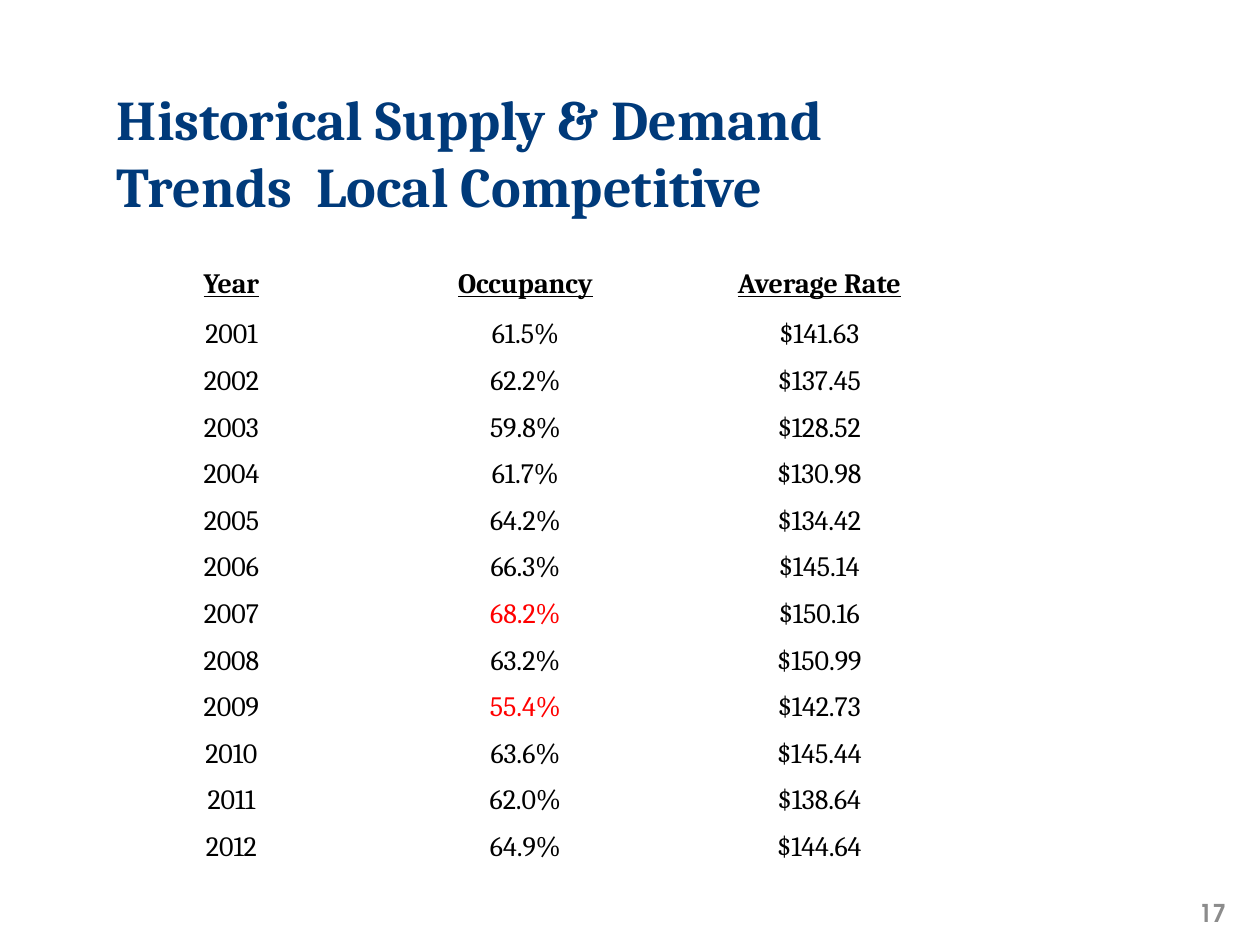
"""Build a slide with a table of yearly occupancy and average rate."""
from pptx import Presentation
from pptx.dml.color import RGBColor
from pptx.enum.text import MSO_ANCHOR, PP_ALIGN
from pptx.util import Inches, Pt

LEFT, CENTER, RIGHT = PP_ALIGN.LEFT, PP_ALIGN.CENTER, PP_ALIGN.RIGHT
MIDDLE = MSO_ANCHOR.MIDDLE

TITLE = "Historical Supply & Demand Trends  Local Competitive"
PAGE_NUMBER = "17"
HEADINGS = ("Year", "Occupancy", "Average Rate")
RECORDS = [
    ("2001", "61.5%", "$141.63"),
    ("2002", "62.2%", "$137.45"),
    ("2003", "59.8%", "$128.52"),
    ("2004", "61.7%", "$130.98"),
    ("2005", "64.2%", "$134.42"),
    ("2006", "66.3%", "$145.14"),
    ("2007", "68.2%", "$150.16"),
    ("2008", "63.2%", "$150.99"),
    ("2009", "55.4%", "$142.73"),
    ("2010", "63.6%", "$145.44"),
    ("2011", "62.0%", "$138.64"),
    ("2012", "64.9%", "$144.64"),
]
HIGHLIGHTS = {"68.2%", "55.4%"}
NAVY, BLACK, RED, GRAY = "003A7A", "000000", "FF0000", "8C8C8C"
HEADING_HEIGHT, RECORD_HEIGHT = 0.4, 0.37
TABLE_WIDTH = 7


def write_text(frame, text, size=16, color=BLACK, font="Cambria",
               align=CENTER, bold=False, underline=False):
    paragraph = frame.paragraphs[0]
    paragraph.alignment = align
    run = paragraph.add_run()
    run.text = text
    run.font.name = font
    run.font.size = Pt(size)
    run.font.bold = bold
    run.font.underline = underline
    run.font.color.rgb = RGBColor.from_string(color)


def add_label(slide, text, left, top, width, height, **text_format):
    box = slide.shapes.add_textbox(
        Inches(left), Inches(top), Inches(width), Inches(height))
    box.text_frame.word_wrap = True
    box.text_frame.vertical_anchor = MIDDLE
    write_text(box.text_frame, text, **text_format)


def add_trend_table(slide):
    rows = [HEADINGS] + RECORDS
    height = HEADING_HEIGHT + RECORD_HEIGHT * len(RECORDS)
    table = slide.shapes.add_table(
        len(rows), len(HEADINGS), Inches(0.67), Inches(2.08),
        Inches(TABLE_WIDTH), Inches(height)).table
    table.first_row = False
    table.horz_banding = False
    for column in table.columns:
        column.width = Inches(TABLE_WIDTH / len(HEADINGS))
    for row_index, values in enumerate(rows):
        heading = row_index == 0
        table.rows[row_index].height = Inches(
            HEADING_HEIGHT if heading else RECORD_HEIGHT)
        for column_index, value in enumerate(values):
            cell = table.cell(row_index, column_index)
            cell.fill.background()
            write_text(cell.text_frame, value, bold=heading, underline=heading,
                       color=RED if value in HIGHLIGHTS else BLACK)


def main():
    presentation = Presentation()
    presentation.slide_width = Inches(10)
    presentation.slide_height = Inches(7.5)
    slide = presentation.slides.add_slide(presentation.slide_layouts[6])
    add_label(slide, TITLE, 0.83, 0.58, 7.17, 1.25,
              size=32, color=NAVY, align=LEFT, bold=True)
    add_trend_table(slide)
    add_label(slide, PAGE_NUMBER, 9.08, 7.08, 0.75, 0.33, size=14,
              color=GRAY, font="TeX Gyre Adventor", align=RIGHT, bold=True)
    presentation.save("out.pptx")


if __name__ == "__main__":
    main()
